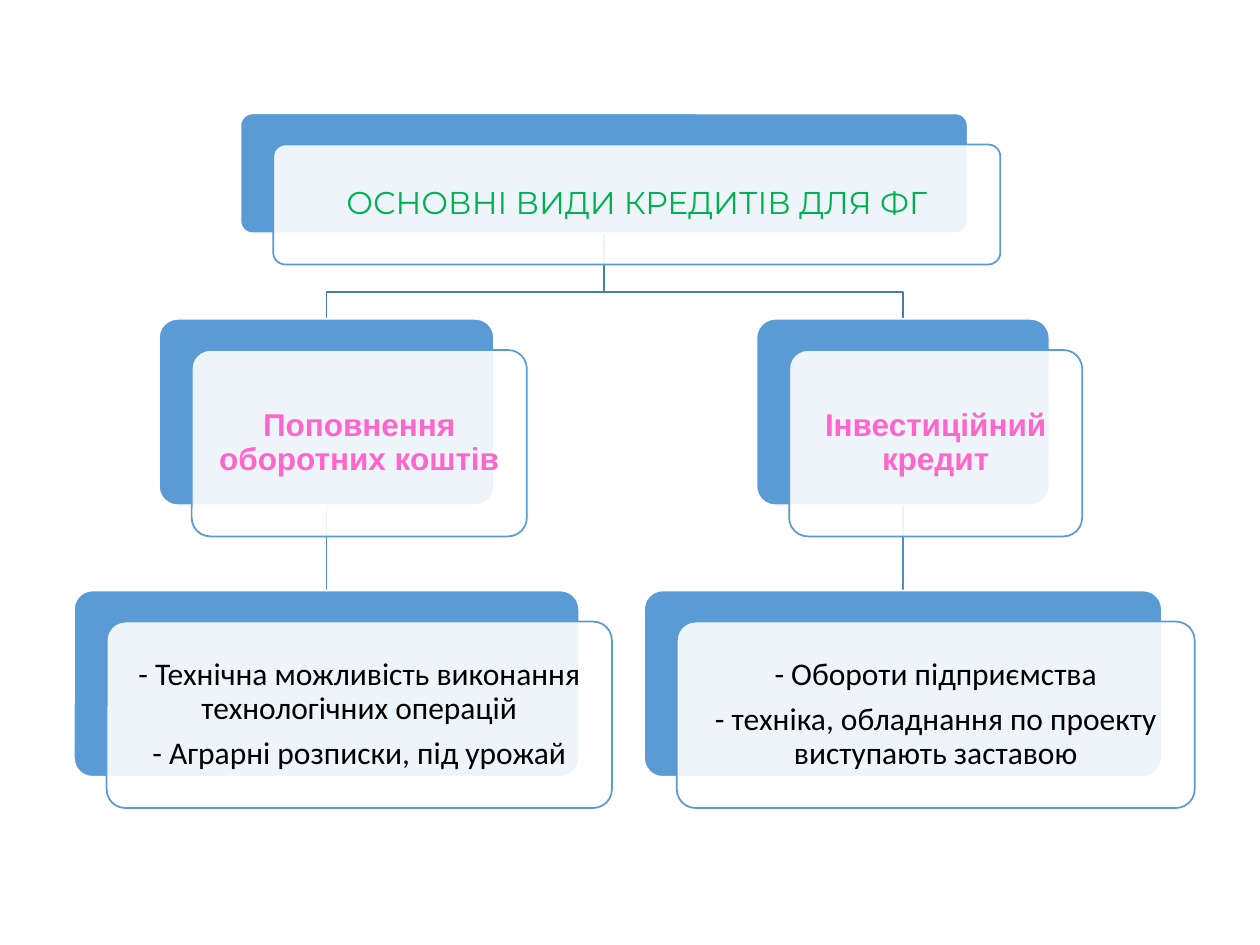
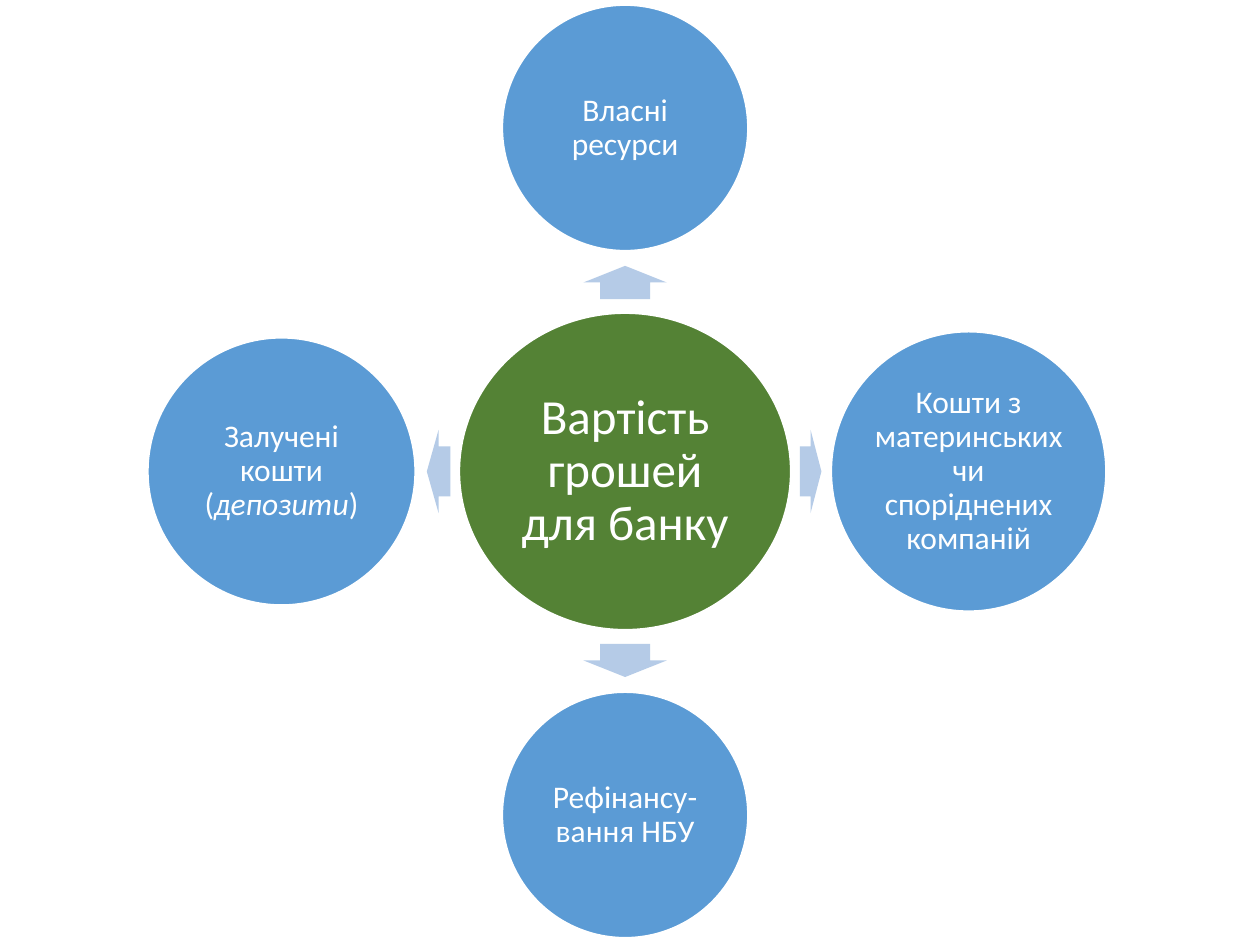
from math import cos, radians, sin

from lxml import etree
from pptx import Presentation
from pptx.dml.color import RGBColor
from pptx.enum.shapes import MSO_CONNECTOR, MSO_SHAPE
from pptx.enum.text import MSO_ANCHOR, PP_ALIGN
from pptx.oxml.ns import qn
from pptx.util import Pt

CARD = MSO_SHAPE.ROUNDED_RECTANGLE
DISC = MSO_SHAPE.OVAL
ARROW = MSO_SHAPE.RIGHT_ARROW
LINE = MSO_CONNECTOR.STRAIGHT
MIDDLE = MSO_ANCHOR.MIDDLE
CENTER = PP_ALIGN.CENTER

HUES = {
    "white": "FFFFFF", "black": "000000", "blue": "5B9BD5", "pale": "B5CBE7",
    "green": "548235", "title": "00B050", "pink": "FF66CC",
    "bend": "497CAB", "drop": "538DC1",
}
RGB = {name: RGBColor.from_string(code) for name, code in HUES.items()}


def add_form(slide, kind, mid_x, mid_y, width, height, fill, edge=None):
    form = slide.shapes.add_shape(kind, Pt(mid_x - width / 2), Pt(mid_y - height / 2),
                                  Pt(width), Pt(height))
    form.shadow.inherit = False
    form.fill.solid()
    form.fill.fore_color.rgb = RGB[fill]
    if edge:
        form.line.color.rgb = RGB[edge]
        form.line.width = Pt(1)
    else:
        form.line.fill.background()
    return form


def add_text(form, paras, font, size, hue, inset, bold=False):
    frame = form.text_frame
    frame.word_wrap = True
    frame.vertical_anchor = MIDDLE
    frame.margin_left = frame.margin_right = Pt(inset)
    frame.margin_top = frame.margin_bottom = Pt(inset)
    for i, runs in enumerate(paras):
        para = frame.add_paragraph() if i else frame.paragraphs[0]
        para.alignment = CENTER
        para.line_spacing = 0.9
        para.space_after = Pt(size * 0.35)
        for text, slant in runs:
            run = para.add_run()
            run.text = text
            run.font.name = font
            run.font.size = Pt(size)
            run.font.bold = bold
            run.font.italic = slant
            run.font.color.rgb = RGB[hue]


deck = Presentation()
deck.slide_width, deck.slide_height = Pt(720), Pt(540)
blank = deck.slide_layouts[6]

# Slide 1: tree of loan types
slide = deck.slides.add_slide(blank)
ROOT_X, LEFT_X, RIGHT_X = 345.2, 186.6, 516
ROOT_Y, KIND_Y, LEAF_Y = 64.8, 182.2, 337.4
ROOT_H, CARD_H = 68.5, 106.5
BEND_Y = 167
SHIFT_X, SHIFT_Y = 18.7, 17.8

# Branches, behind the cards
for x in (RIGHT_X, LEFT_X):
    drop = slide.shapes.add_connector(LINE, Pt(x), Pt(KIND_Y + CARD_H), Pt(x), Pt(LEAF_Y))
    drop.line.color.rgb = RGB["drop"]
    drop.line.width = Pt(1)
    etree.SubElement(drop._element.spPr, qn("a:effectLst"))

    pen = slide.shapes.build_freeform(Pt(ROOT_X), Pt(ROOT_Y + ROOT_H))
    pen.add_line_segments([(Pt(ROOT_X), Pt(BEND_Y)), (Pt(x), Pt(BEND_Y)),
                           (Pt(x), Pt(KIND_Y))], close=False)
    bend = pen.convert_to_shape()
    bend.shadow.inherit = False
    bend.fill.background()
    bend.line.color.rgb = RGB["bend"]
    bend.line.width = Pt(1)

# Cards: centre, top, width, height, font, colour, bold, paragraphs
cards = [
    (ROOT_X, ROOT_Y, 415.5, ROOT_H, "Montserrat", "title", False,
     ["ОСНОВНІ ВИДИ КРЕДИТІВ ДЛЯ ФГ"]),
    (LEFT_X, KIND_Y, 191.5, CARD_H, "Arial", "pink", True,
     ["Поповнення оборотних коштів"]),
    (LEFT_X, LEAF_Y, 288.7, CARD_H, "Calibri", "black", False,
     ["- Технічна можливість виконання технологічних операцій",
      "- Аграрні розписки, під урожай"]),
    (RIGHT_X, KIND_Y, 167.4, CARD_H, "Arial", "pink", True,
     ["Інвестиційний кредит"]),
    (RIGHT_X, LEAF_Y, 295.9, CARD_H, "Calibri", "black", False,
     ["- Обороти підприємства",
      "- техніка, обладнання по проекту виступають заставою"]),
]
for x, top, width, height, font, hue, bold, paras in cards:
    y = top + height / 2
    back = add_form(slide, CARD, x, y, width, height, "blue", "white")
    front = add_form(slide, CARD, x + SHIFT_X, y + SHIFT_Y, width, height, "white", "blue")
    back.adjustments[0] = front.adjustments[0] = 0.1
    tint = front._element.spPr.find(qn("a:solidFill"))[0]
    etree.SubElement(tint, qn("a:alpha"), val="90000")
    add_text(front, [[(text, False)] for text in paras], font, 18, hue, 5.4, bold)

# Slide 2: hub with four sources of funds
slide = deck.slides.add_slide(blank)
HUB_X, HUB_Y, REACH = 357.2, 269.4, 196.3
hub = add_form(slide, DISC, HUB_X, HUB_Y, 189.4, 181, "green", "white")
add_text(hub, [[("Вартість грошей для банку", False)]], "Calibri", 28, "white", 2.8)

# Spokes: angle, disc width and height, arrow length and distance, runs
spokes = [
    (270, 140.4, 140.4, 19, 108, [("Власні ресурси", False)]),
    (0, 157, 159.8, 12.4, 106, [("Кошти з материнських чи споріднених компаній", False)]),
    (90, 140.4, 140.4, 19, 108, [("Рефінансу-вання НБУ", False)]),
    (180, 152.8, 152.8, 13.4, 106.6,
     [("Залучені кошти (", False), ("депозити", True), (")", False)]),
]
for angle, width, height, length, gap, runs in spokes:
    dx, dy = cos(radians(angle)), sin(radians(angle))
    arrow = add_form(slide, ARROW, HUB_X + gap * dx, HUB_Y + gap * dy, length, 47.6, "pale")
    arrow.rotation = angle
    arrow.adjustments[0], arrow.adjustments[1] = 0.6, 0.5
    disc = add_form(slide, DISC, HUB_X + REACH * dx, HUB_Y + REACH * dy,
                    width, height, "blue", "white")
    add_text(disc, [runs], "Calibri", 18, "white", 1.8)

deck.save("out.pptx")
